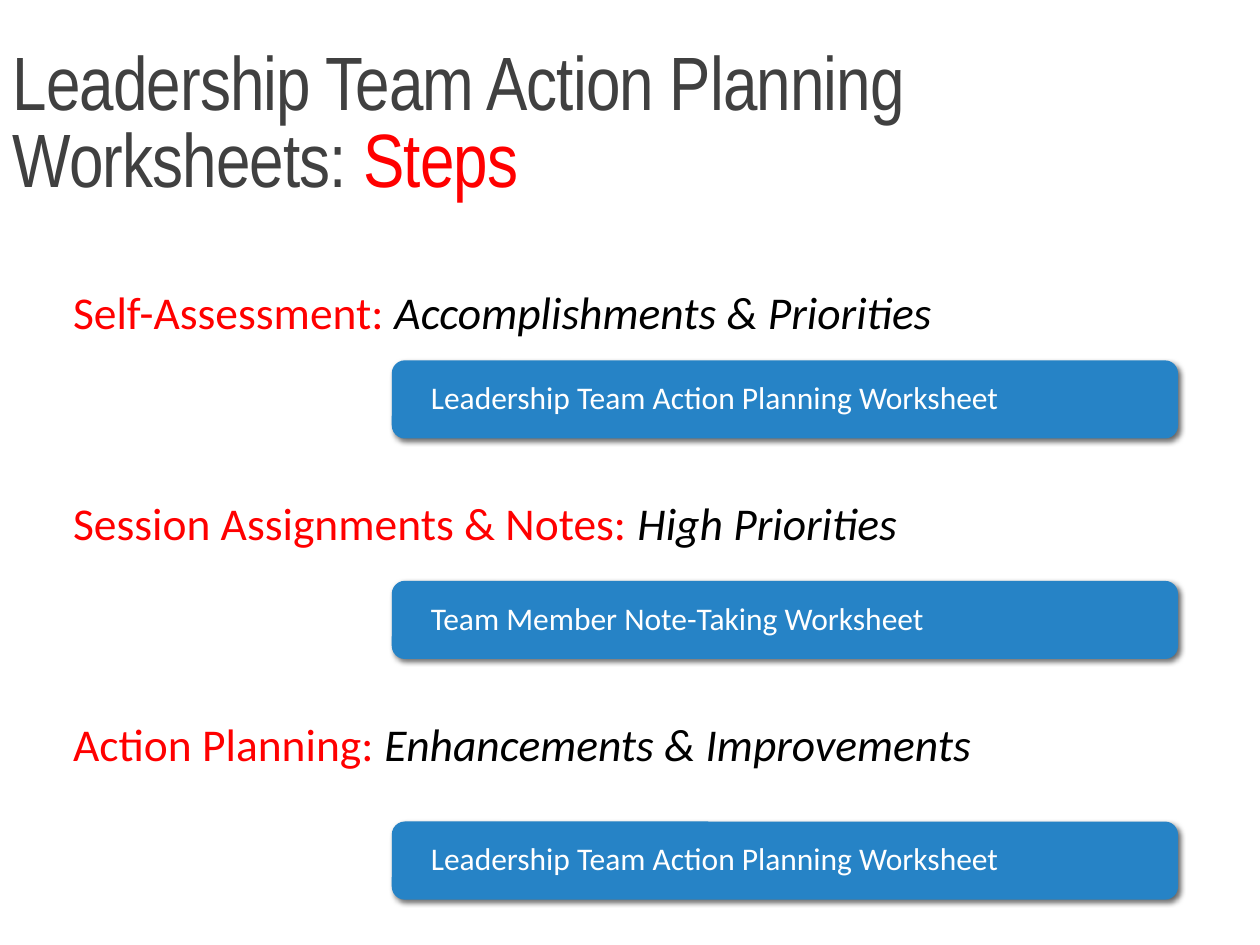
from lxml.etree import SubElement
from pptx import Presentation
from pptx.dml.color import RGBColor
from pptx.enum.shapes import MSO_SHAPE
from pptx.enum.text import MSO_ANCHOR, MSO_AUTO_SIZE, PP_ALIGN
from pptx.oxml import parse_xml
from pptx.oxml.ns import nsdecls, qn
from pptx.util import Inches, Pt

WIDTH, HEIGHT = Inches(10), Inches(7.5)
COL, ROW = WIDTH / 100, HEIGHT / 75  # grid of 100 columns by 75 rows

RED, BLUE, WHITE = "FF0000", "2683C6", "FFFFFF"
TITLE = dict(name="Arial Narrow", size=Pt(43.2), bold=False, color="404040")
HEADING = dict(name="Calibri", size=Pt(26), color=RED)
DETAIL = dict(HEADING, color="000000", italic=True)
LABEL = dict(name="Calibri", size=Pt(18), color=WHITE)

# top row, height, text inset, heading, detail, worksheet
STEPS = [
    (21, 11, 2, "Self-Assessment: ", "Accomplishments & Priorities",
     "Leadership Team Action Planning Worksheet"),
    (37.3, 12.2, 2.5, "Session Assignments & Notes: ", "High Priorities",
     "Team Member Note-Taking Worksheet"),
    (54.8, 13.8, 2.5, "Action Planning: ", "Enhancements & Improvements",
     "Leadership Team Action Planning Worksheet"),
]


def rgb(value):
    return RGBColor.from_string(value)


def place(sp, box):
    x, y, w, h = box
    sp.left, sp.top = round(x * COL), round(y * ROW)
    sp.width, sp.height = round(w * COL), round(h * ROW)


def add_run(p, text, style):
    r = p.add_run()
    r.text = text
    for key, value in style.items():
        if key == "color":
            r.font.color.rgb = rgb(value)
        else:
            setattr(r.font, key, value)
    return r


def add_panel(s, kind, box, fill, insets, anchor):
    """Add a filled, unlined shape and return it with its first paragraph."""
    sp = s.shapes.add_shape(kind, 0, 0, 0, 0)
    place(sp, box)
    sp.shadow.inherit = False
    sp.fill.solid()
    sp.fill.fore_color.rgb = rgb(fill)
    sp.line.fill.background()
    tf = sp.text_frame
    left, top, right, bottom = insets
    frame = dict(word_wrap=True, vertical_anchor=anchor,
                 margin_left=round(left * COL), margin_right=round(right * COL),
                 margin_top=round(top * ROW), margin_bottom=round(bottom * ROW))
    for key, value in frame.items():
        setattr(tf, key, value)
    p = tf.paragraphs[0]
    p.alignment, p.line_spacing = PP_ALIGN.LEFT, 0.9
    return sp, p


def set_transparency(sp, opacity):
    color = sp.fill._xPr.find(qn("a:solidFill"))[0]
    SubElement(color, qn("a:alpha"), val=str(opacity * 1000))


def add_shadow(sp):
    effects = sp._element.spPr.find(qn("a:effectLst"))
    effects.append(parse_xml(
        f'<a:outerShdw {nsdecls("a")} blurRad="{Pt(3)}" dist="{Pt(2)}" '
        'dir="2700000" algn="ctr" rotWithShape="0"><a:srgbClr val="000000">'
        '<a:alpha val="60000"/></a:srgbClr></a:outerShdw>'))


def add_title(s, box):
    sp = s.shapes.title
    place(sp, box)
    tf = sp.text_frame
    tf.word_wrap, tf.auto_size = True, MSO_AUTO_SIZE.NONE
    tf.vertical_anchor = MSO_ANCHOR.BOTTOM
    p = tf.paragraphs[0]
    p.alignment, p.line_spacing = PP_ALIGN.LEFT, 0.85
    runs = [add_run(p, "Leadership Team Action Planning ", TITLE)]
    p.add_line_break()
    runs += [add_run(p, "Worksheets: ", TITLE),
             add_run(p, "Steps", dict(TITLE, color=RED))]
    for r in runs:
        r._r.get_or_add_rPr().set("spc", "-50")


def add_step(s, box, inset, heading, detail, worksheet):
    """Add a heading panel with its worksheet card over the lower edge."""
    x, y, w, h = box
    panel, p = add_panel(s, MSO_SHAPE.RECTANGLE, box, WHITE,
                         (3, inset, 3, 1.9), MSO_ANCHOR.TOP)
    set_transparency(panel, 90)
    add_run(p, heading, HEADING)
    add_run(p, detail, DETAIL)

    card_box = (x + 28.3, y + h - 3.4, 62.4, 6.2)
    card, p = add_panel(s, MSO_SHAPE.ROUNDED_RECTANGLE, card_box, BLUE,
                        (2.8, 0.3, 2.8, 0.3), MSO_ANCHOR.MIDDLE)
    add_shadow(card)
    add_run(p, worksheet, LABEL)


def main():
    prs = Presentation()
    prs.slide_width, prs.slide_height = WIDTH, HEIGHT
    s = prs.slides.add_slide(prs.slide_layouts[5])
    s.background.fill.solid()
    s.background.fill.fore_color.rgb = rgb(WHITE)
    add_title(s, (0, 4.1, 100, 12.5))
    for top, height, *content in STEPS:
        add_step(s, (2.8, top, 94.8, height), *content)
    prs.save("out.pptx")


if __name__ == "__main__":
    main()
